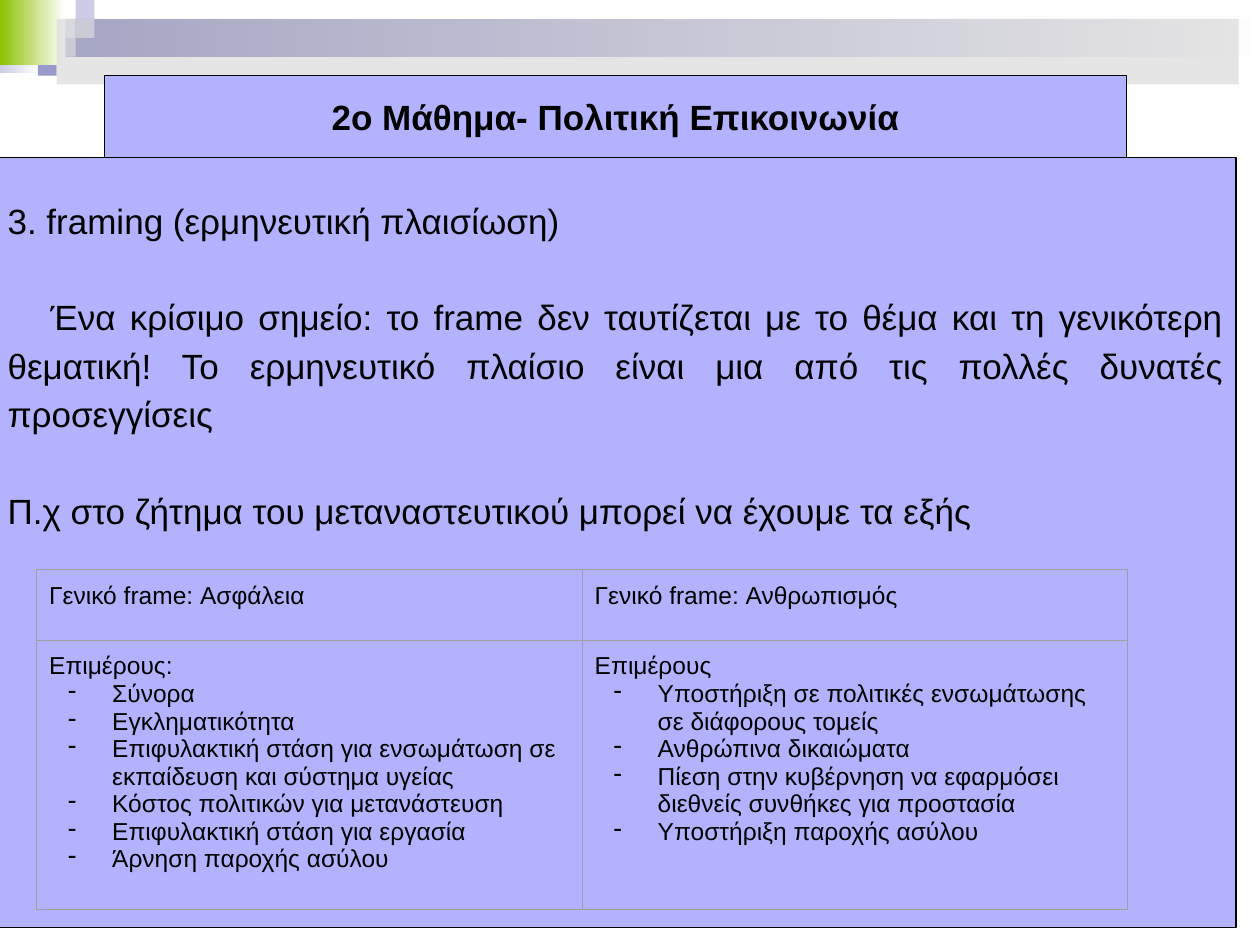
from lxml import etree
from pptx import Presentation
from pptx.dml.color import RGBColor
from pptx.enum import shapes, text
from pptx.oxml import ns
from pptx.util import Inches, Pt

THEME = {
    "font": "Arial", "text": "000000", "panel": "B2B2FF", "outline": "000000",
    "grid": "9E9E9E", "heading_size": 20, "table_size": 14, "line": 0.75,
}

TITLE = "2ο Μάθημα- Πολιτική Επικοινωνία"
# text, first-line indent in inches, space before in points
BODY = [
    ("3. framing (ερμηνευτική πλαισίωση)", 0, 0),
    ("Ένα κρίσιμο σημείο: το frame δεν ταυτίζεται με το θέμα και τη γενικότερη "
     "θεματική! Το ερμηνευτικό πλαίσιο είναι μια από τις πολλές δυνατές "
     "προσεγγίσεις", 0.34, 27.7),
    ("Π.χ στο ζήτημα του μεταναστευτικού μπορεί να έχουμε τα εξής", 0, 27.7),
]
# heading, lead-in, items
FRAMES = [
    ("Γενικό frame: Ασφάλεια", "Επιμέρους:", [
        "Σύνορα",
        "Εγκληματικότητα",
        "Επιφυλακτική στάση για ενσωμάτωση σε εκπαίδευση και σύστημα υγείας",
        "Κόστος πολιτικών για μετανάστευση",
        "Επιφυλακτική στάση για εργασία",
        "Άρνηση παροχής ασύλου",
    ]),
    ("Γενικό frame: Ανθρωπισμός", "Επιμέρους", [
        "Υποστήριξη σε πολιτικές ενσωμάτωσης σε διάφορους τομείς",
        "Ανθρώπινα δικαιώματα",
        "Πίεση στην κυβέρνηση να εφαρμόσει διεθνείς συνθήκες για προστασία",
        "Υποστήριξη παροχής ασύλου",
    ]),
]

TITLE_BOX = (0.83, 0.6, 8.11, 0.65)
BODY_BOX = (-0.04, 1.25, 9.85, 6.11)
TABLE_AT = (0.29, 4.52)
COLUMN_WIDTH = 4.33
ROW_HEIGHTS = (0.56, 2.14)

# box, colours (two make a gradient from left to right), opacity in percent
SQUARE = 0.15
DECORATION = [
    ((0, 0, 0.31, 0.58), ("CCCCE6", "FFFFFF"), 100),
    ((0.45, 0.15, 9.55, 0.3), ("00007D", "FFFFFF"), 100),
    *[((left, top, SQUARE, SQUARE), (colour,), 100) for left, top, colour in (
        (0.45, 0.15, "CCCCE6"), (0.6, 0, "CCCCE6"), (0.6, 0.15, "9999CC"),
        (0.3, 0.3, "CCCCE6"), (0.14, 0.15, "00007D"), (0.45, 0.3, "9999CC"),
        (0.3, 0.45, "9999CC"))],
    ((0, 0, 0.52, 0.52), ("8EC000", "FFFFFF"), 100),
    ((0.45, 0.15, 9.38, 0.52), ("DDDDDD",), 75),
]


def rgb(colour):
    return RGBColor.from_string(colour)


def add_xml(parent, tag, **attributes):
    return etree.SubElement(parent, ns.qn(tag), attributes)


def write(frame, content, *, size, bold=False, align=text.PP_ALIGN.LEFT,
          spacing=1.0, before=0, margin=0, indent=0, bullet=None):
    """Fill the frame's empty first paragraph, or add one after the others."""
    first = frame.paragraphs[0]
    paragraph = frame.add_paragraph() if first.runs else first
    paragraph.alignment = align
    paragraph.line_spacing = spacing
    paragraph.space_before = Pt(before)
    paragraph.space_after = Pt(0)
    properties = paragraph._p.get_or_add_pPr()
    properties.set("marL", str(Inches(margin)))
    properties.set("indent", str(Inches(indent)))
    if bullet:
        colour = add_xml(properties, "a:buClr")
        add_xml(colour, "a:srgbClr", val=THEME["text"])
        add_xml(properties, "a:buChar", char=bullet)
    else:
        add_xml(properties, "a:buNone")
    run = paragraph.add_run()
    run.text = content
    run.font.name = THEME["font"]
    run.font.size = Pt(size)
    run.font.bold = bold
    run.font.color.rgb = rgb(THEME["text"])


def add_decoration(slide, box, colours, opacity):
    shape = slide.shapes.add_shape(shapes.MSO_SHAPE.RECTANGLE, *map(Inches, box))
    shape.shadow.inherit = False
    shape.line.fill.background()
    if len(colours) == 2:
        shape.fill.gradient()
        shape.fill.gradient_angle = 0
        for position, (stop, colour) in enumerate(
                zip(shape.fill.gradient_stops, colours)):
            stop.position = position
            stop.color.rgb = rgb(colour)
    else:
        shape.fill.solid()
        shape.fill.fore_color.rgb = rgb(colours[0])
        if opacity < 100:
            colour = shape._element.spPr.find(".//" + ns.qn("a:srgbClr"))
            add_xml(colour, "a:alpha", val=str(opacity * 1000))


def prepare_panel(slide, shape, box, anchor, top_inset):
    """Place and format a placeholder above the decoration; return its text frame."""
    slide.shapes._spTree.append(shape._element)
    shape.left, shape.top, shape.width, shape.height = map(Inches, box)
    shape.fill.solid()
    shape.fill.fore_color.rgb = rgb(THEME["panel"])
    shape.line.color.rgb = rgb(THEME["outline"])
    shape.line.width = Pt(THEME["line"])
    frame = shape.text_frame
    frame.word_wrap = True
    frame.auto_size = text.MSO_AUTO_SIZE.NONE
    frame.vertical_anchor = anchor
    frame.margin_left = frame.margin_right = Inches(0.1)
    frame.margin_top, frame.margin_bottom = Inches(top_inset), Inches(0.05)
    return frame


def format_cell(cell):
    cell.margin_left = cell.margin_right = Inches(0.1)
    cell.margin_top = cell.margin_bottom = Inches(0.1)
    properties = cell._tc.get_or_add_tcPr()
    for side in ("a:lnL", "a:lnR", "a:lnT", "a:lnB"):
        border = add_xml(properties, side, w=str(Pt(THEME["line"])))
        add_xml(add_xml(border, "a:solidFill"), "a:srgbClr", val=THEME["grid"])
    cell.fill.background()


def add_frames_table(slide):
    size = (COLUMN_WIDTH * len(FRAMES), sum(ROW_HEIGHTS))
    table = slide.shapes.add_table(
        len(ROW_HEIGHTS), len(FRAMES), *map(Inches, TABLE_AT + size)).table
    table.first_row = table.horz_banding = False
    for row, height in zip(table.rows, ROW_HEIGHTS):
        row.height = Inches(height)
    for index, (heading, lead, items) in enumerate(FRAMES):
        table.columns[index].width = Inches(COLUMN_WIDTH)
        top, bottom = table.cell(0, index), table.cell(1, index)
        format_cell(top)
        format_cell(bottom)
        write(top.text_frame, heading, size=THEME["table_size"])
        write(bottom.text_frame, lead, size=THEME["table_size"])
        for item in items:
            write(bottom.text_frame, item, size=THEME["table_size"],
                  margin=0.5, indent=-0.35, bullet="-")


def main():
    presentation = Presentation()
    presentation.slide_width, presentation.slide_height = Inches(10), Inches(7.5)
    slide = presentation.slides.add_slide(presentation.slide_layouts[1])
    for box, colours, opacity in DECORATION:
        add_decoration(slide, box, colours, opacity)

    body = prepare_panel(slide, slide.placeholders[1], BODY_BOX,
                         text.MSO_ANCHOR.TOP, 0.28)
    for content, indent, before in BODY:
        write(body, content, size=THEME["heading_size"], spacing=1.15,
              align=text.PP_ALIGN.JUSTIFY, indent=indent, before=before)

    title = prepare_panel(slide, slide.shapes.title, TITLE_BOX,
                          text.MSO_ANCHOR.MIDDLE, 0.05)
    write(title, TITLE, size=THEME["heading_size"], bold=True,
          align=text.PP_ALIGN.CENTER)
    add_frames_table(slide)
    presentation.save("out.pptx")


if __name__ == "__main__":
    main()
